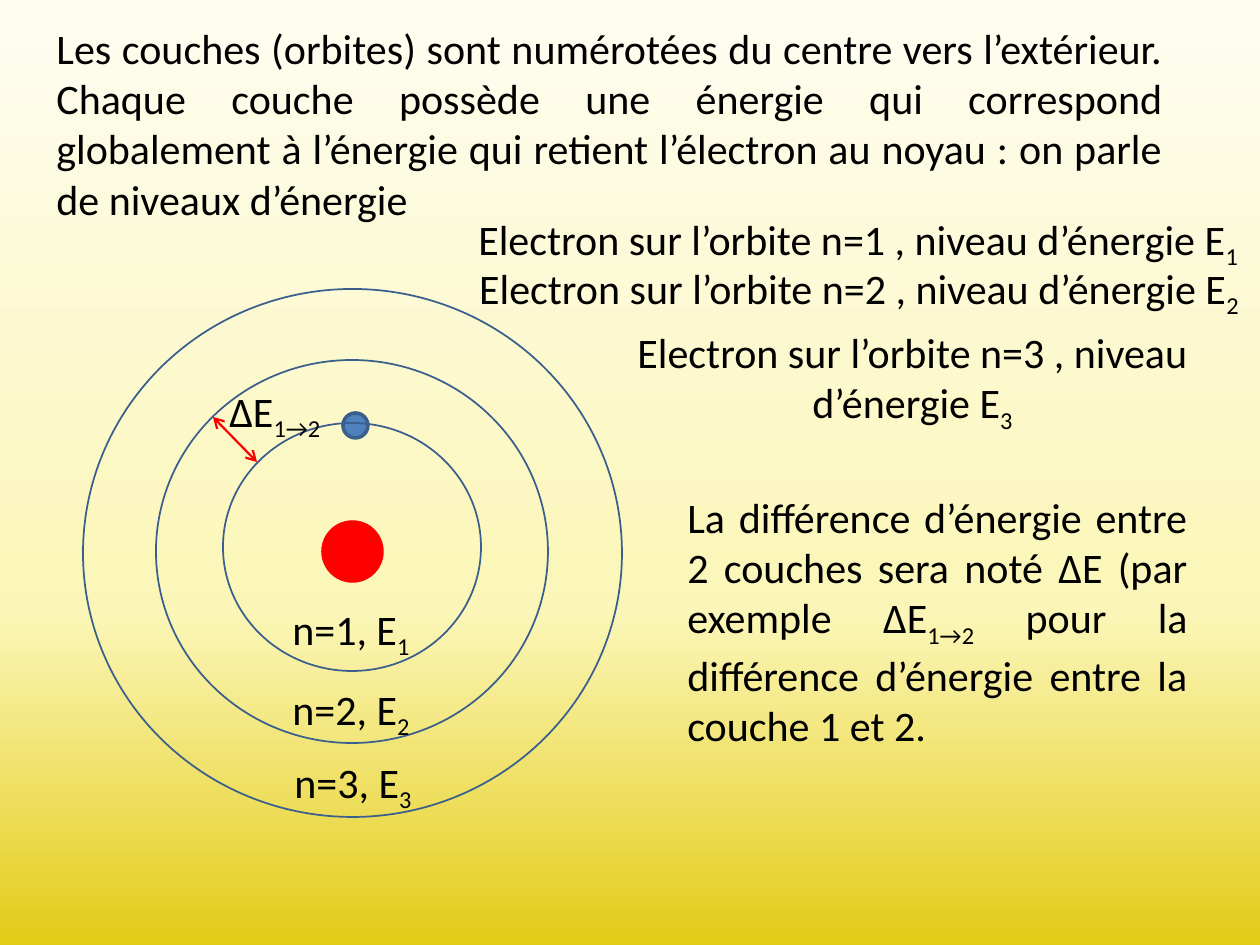
from copy import deepcopy
from pptx import Presentation
from pptx.dml.color import RGBColor
from pptx.enum.shapes import MSO_CONNECTOR, MSO_SHAPE
from pptx.enum.text import PP_ALIGN
from pptx.oxml.ns import qn
from pptx.util import Pt
from lxml.etree import SubElement

PX = 914400 // 126
COLORS = {"text": "000000", "orbit": "3A5F8C", "electron": "4F81BD", "red": "FF0000"}
SKY = [(0, "FEFDF0"), (0.65, "FBF6B7"), (1, "E3CB17")]
LEFT, MID, FULL = PP_ALIGN.LEFT, PP_ALIGN.CENTER, PP_ALIGN.JUSTIFY

# box, fill, line, line width
CIRCLES = [
    ((343, 413, 25, 25), "electron", "orbit", 2),
    ((323, 522, 59, 59), "red", "red", 2),
    ((156, 360, 392, 383), None, "orbit", 1),
    ((83, 289, 539, 528), None, "orbit", 1),
    ((223, 423, 258, 248), None, "orbit", 1),
]
# box, alignment, text with subscripts between bars
TEXTS = [
    ((280, 597, 152, 63), LEFT, "n=1, E|1|"),
    ((280, 677, 186, 63), LEFT, "n=2, E|2|"),
    ((282, 750, 203, 63), LEFT, "n=3, E|3|"),
    ((44, 16, 1131, 217), FULL,
     "Les couches (orbites) sont numérotées du centre vers l’extérieur. "
     "Chaque couche possède une énergie qui correspond globalement à l’énergie "
     "qui retient l’électron au noyau : on parle de niveaux d’énergie"),
    ((466, 207, 794, 63), LEFT, "Electron sur l’orbite n=1 , niveau d’énergie E|1|"),
    ((456, 256, 806, 63), MID, "Electron sur l’orbite n=2 , niveau d’énergie E|2|"),
    ((621, 320, 583, 115), MID, "Electron sur l’orbite n=3 , niveau d’énergie E|3|"),
    ((675, 485, 525, 267), FULL,
     "La différence d’énergie entre 2 couches sera noté ΔE (par exemple ΔE|1→2| "
     "pour la différence d’énergie entre la couche 1 et 2."),
]
GAP = (213, 417, 257, 462)
GAP_TEXT = ((217, 379, 125, 63), FULL, "ΔE|1→2|")


def emu(box):
    return [n * PX for n in box]


def color(name):
    return RGBColor.from_string(COLORS[name])


def add_text(shapes, box, align, text):
    frame = shapes.add_textbox(*emu(box)).text_frame
    frame.word_wrap = True
    para = frame.paragraphs[0]
    para.alignment = align
    para.font.name, para.font.size = "Calibri", Pt(24)
    para.font.color.rgb = color("text")
    for i, part in enumerate(text.split("|")):
        if part:
            run = para.add_run()
            run.text = part
            if i % 2:
                run._r.get_or_add_rPr().set("baseline", "-25000")


def add_circle(shapes, box, fill, line, width):
    disc = shapes.add_shape(MSO_SHAPE.OVAL, *emu(box))
    disc.shadow.inherit = False
    if fill:
        disc.fill.solid()
        disc.fill.fore_color.rgb = color(fill)
    else:
        disc.fill.background()
    disc.line.color.rgb = color(line)
    disc.line.width = Pt(width)


def add_arrow(shapes, ends):
    """Draw a red line with an open arrowhead at both ends."""
    arrow = shapes.add_connector(MSO_CONNECTOR.STRAIGHT, *emu(ends))
    arrow.line.color.rgb = color("red")
    arrow.line.width = Pt(1.25)
    for tag in ("a:headEnd", "a:tailEnd"):
        SubElement(arrow.line._get_or_add_ln(), qn(tag), type="arrow")
    SubElement(arrow._element.spPr, qn("a:effectLst"))


def paint_back(slide):
    fill = slide.background.fill
    fill.gradient()
    fill.gradient_angle = 270
    stops = slide.element.find(".//" + qn("a:gsLst"))
    stops.append(deepcopy(stops[-1]))
    for stop, (pos, tone) in zip(fill.gradient_stops, SKY):
        stop.position = pos
        stop.color.rgb = RGBColor.from_string(tone)


def main():
    deck = Presentation()
    deck.slide_width, deck.slide_height = emu((1260, 945))
    slide = deck.slides.add_slide(deck.slide_layouts[6])
    paint_back(slide)
    for item in CIRCLES:
        add_circle(slide.shapes, *item)
    for item in TEXTS:
        add_text(slide.shapes, *item)
    group = slide.shapes.add_group_shape()
    add_arrow(group.shapes, GAP)
    add_text(group.shapes, *GAP_TEXT)
    deck.save("out.pptx")


if __name__ == "__main__":
    main()
